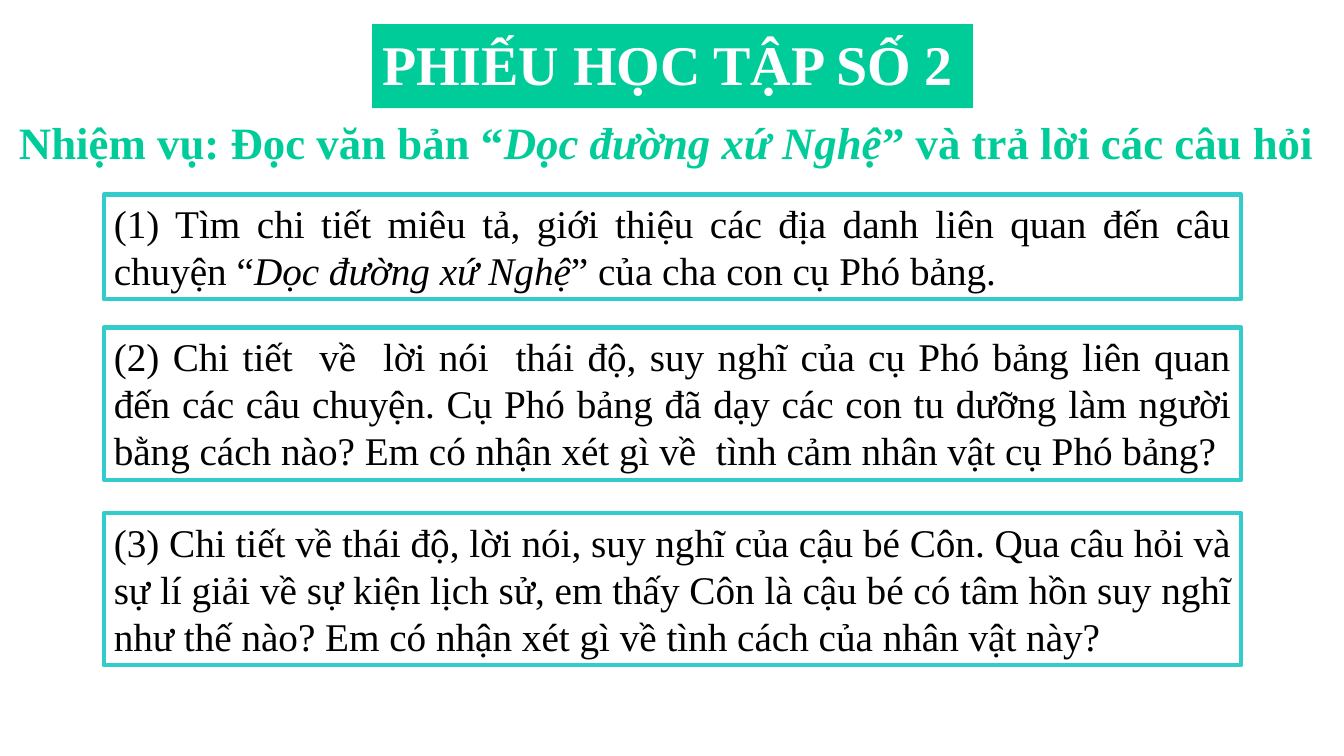
from dataclasses import dataclass

from pptx import Presentation
from pptx.dml.color import RGBColor
from pptx.enum.shapes import MSO_SHAPE
from pptx.enum.text import MSO_ANCHOR, MSO_AUTO_SIZE, PP_ALIGN
from pptx.util import Inches, Pt

RECTANGLE = MSO_SHAPE.RECTANGLE
TOP = MSO_ANCHOR.TOP
GROW = MSO_AUTO_SIZE.SHAPE_TO_FIT_TEXT
JUSTIFY = PP_ALIGN.JUSTIFY
TITLE_ONLY_LAYOUT = 5


@dataclass(frozen=True)
class Theme:
    font: str = "Times New Roman"
    green: RGBColor = RGBColor(0x00, 0xCC, 0x99)
    turquoise: RGBColor = RGBColor(0x33, 0xCC, 0xCC)
    white: RGBColor = RGBColor(0xFF, 0xFF, 0xFF)
    black: RGBColor = RGBColor(0x00, 0x00, 0x00)
    title_size: int = 40
    task_size: int = 32
    question_size: int = 28
    border_width: int = 3


STORY = "Dọc đường xứ Nghệ"
TITLE = "PHIẾU HỌC TẬP SỐ 2"
TASK = ["Nhiệm vụ: Đọc văn bản “", STORY, "” và trả lời các câu hỏi"]
QUESTIONS = [
    (1.93, 1.04, [
        "(1) Tìm chi tiết miêu tả, giới thiệu các địa danh liên quan đến câu chuyện “",
        STORY,
        "” của cha con cụ Phó bảng.",
    ]),
    (3.25, 1.51, [
        "(2) Chi tiết  về  lời nói  thái độ, suy nghĩ của cụ Phó bảng liên quan đến "
        "các câu chuyện. Cụ Phó bảng đã dạy các con tu dưỡng làm người bằng cách nào? "
        "Em có nhận xét gì về  tình cảm nhân vật cụ Phó bảng?",
    ]),
    (5.09, 1.51, [
        "(3) Chi tiết về thái độ, lời nói, suy nghĩ của cậu bé Côn. Qua câu hỏi và sự "
        "lí giải về sự kiện lịch sử, em thấy Côn là cậu bé có tâm hồn suy nghĩ như thế "
        "nào? Em có nhận xét gì về tình cách của nhân vật này?",
    ]),
]


def write_text(shape, parts, *, font, size, color, bold=False):
    frame = shape.text_frame
    frame.word_wrap = True
    frame.auto_size = GROW
    frame.vertical_anchor = TOP
    paragraph = frame.paragraphs[0]
    paragraph.alignment = JUSTIFY
    for part in parts:
        run = paragraph.add_run()
        run.text = part
        run.font.name = font
        run.font.size = Pt(size)
        run.font.color.rgb = color
        run.font.bold = bold
        run.font.italic = part == STORY


class Worksheet:
    def __init__(self, slide, theme):
        self.slide = slide
        self.theme = theme

    def title(self, text, left, top, width, height):
        shape = self.slide.shapes.title
        shape.left, shape.top = Inches(left), Inches(top)
        shape.width, shape.height = Inches(width), Inches(height)
        shape.fill.solid()
        shape.fill.fore_color.rgb = self.theme.green
        write_text(shape, [text], font=self.theme.font, size=self.theme.title_size,
                   color=self.theme.white, bold=True)

    def task(self, parts, left, top, width, height):
        shape = self.slide.shapes.add_textbox(
            Inches(left), Inches(top), Inches(width), Inches(height))
        write_text(shape, parts, font=self.theme.font, size=self.theme.task_size,
                   color=self.theme.green, bold=True)

    def question(self, parts, left, top, width, height):
        shape = self.slide.shapes.add_shape(
            RECTANGLE, Inches(left), Inches(top), Inches(width), Inches(height))
        shape.shadow.inherit = False
        shape.fill.background()
        shape.line.color.rgb = self.theme.turquoise
        shape.line.width = Pt(self.theme.border_width)
        write_text(shape, parts, font=self.theme.font, size=self.theme.question_size,
                   color=self.theme.black)


def main():
    presentation = Presentation()
    presentation.slide_width = Inches(13.33)
    presentation.slide_height = Inches(7.5)
    slide = presentation.slides.add_slide(presentation.slide_layouts[TITLE_ONLY_LAYOUT])
    worksheet = Worksheet(slide, Theme())
    worksheet.title(TITLE, 3.69, 0.24, 5.96, 0.77)
    worksheet.task(TASK, 0.09, 1.09, 13.33, 0.64)
    for top, height, parts in QUESTIONS:
        worksheet.question(parts, 1.03, top, 11.28, height)
    presentation.save("out.pptx")


if __name__ == "__main__":
    main()
